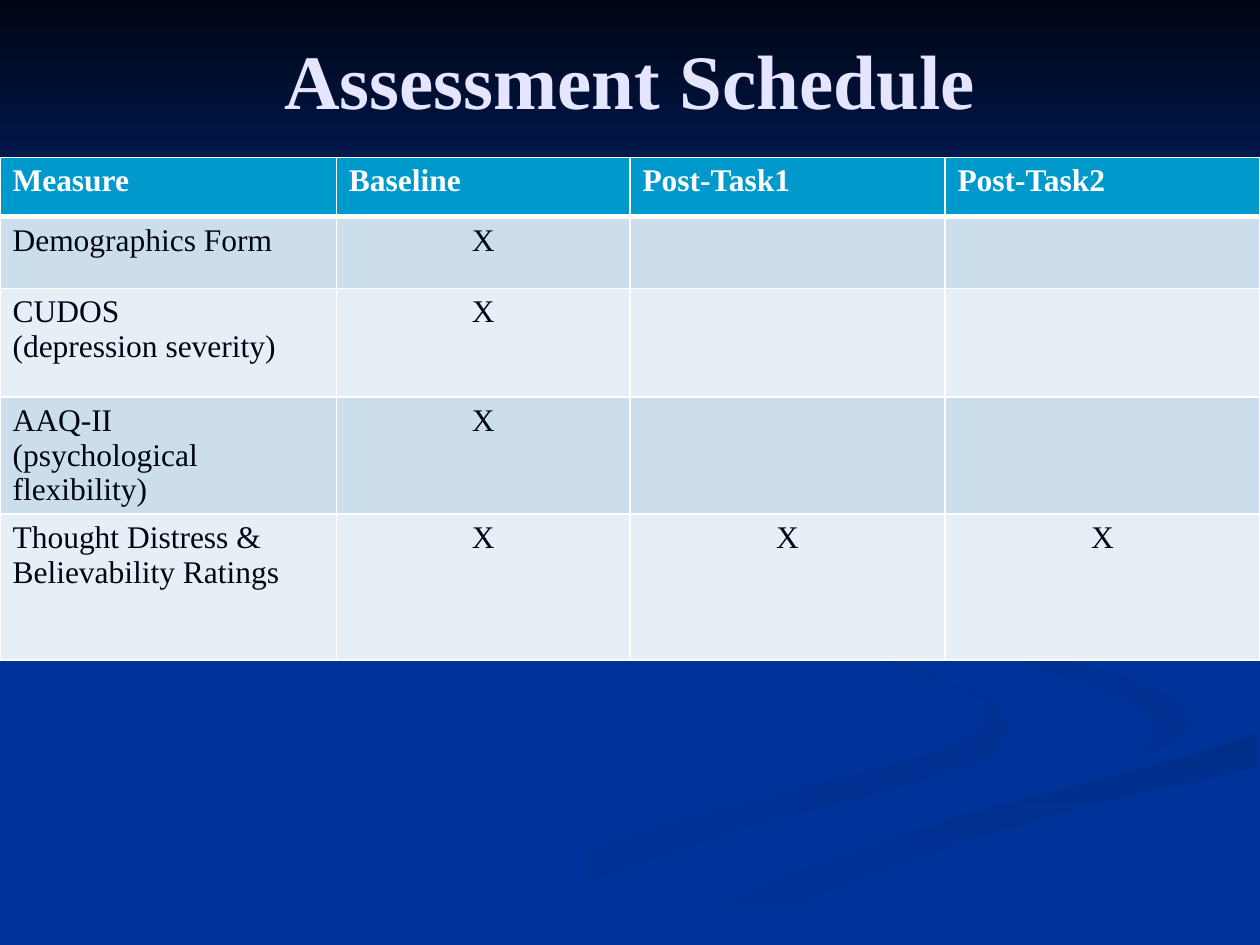
from lxml import etree
from pptx import Presentation
from pptx import util as u
from pptx.dml.color import RGBColor
from pptx.enum import text as t
from pptx.oxml.ns import qn

FONT = "Times New Roman"
BLUE, NIGHT, WHITE = "003399", "000514", "FFFFFF"
HEAD, BANDS = "0099CC", ("CCDEEC", "E7EFF6")
COLS = [2.67, 2.33, 2.5, 2.5]
ROWS = [0.47, 0.57, 0.86, 0.86, 1.16]
TABLE = [
    ["Measure", "Baseline", "Post-Task1", "Post-Task2"],
    ["Demographics Form", "X", "", ""],
    ["CUDOS\n(depression severity)", "X", "", ""],
    ["AAQ-II\n(psychological flexibility)", "X", "", ""],
    ["Thought Distress & Believability Ratings", "X", "X", "X"],
]
WAVES = [
    (BLUE, "003193", 0, [
        (7.81, 5.53), (7.31, 5.33), (6.14, 4.96), (5.75, 4.59), (5.81, 4.84),
        (7.14, 5.3), (7.62, 5.47), (7.81, 5.56), (7.86, 5.66), (7.74, 5.83),
        (7.39, 5.98), (6.84, 6.13), (5.39, 6.49), (4.17, 6.9), (3, 7.49),
        (3.61, 7.49), (4.66, 7), (5.94, 6.56), (7.4, 6.18), (7.86, 6.01),
        (8, 5.81), (7.95, 5.67)]),
    (BLUE, "003193", 45, [
        (9.43, 5.7), (9.3, 5.53), (8.88, 5.35), (7.74, 5.03), (7.24, 4.64),
        (7.46, 5), (8.38, 5.36), (8.92, 5.53), (9.15, 5.71), (9.17, 5.85),
        (8.94, 6.05), (9.32, 5.89), (9.43, 5.76)]),
    ("002F8C", BLUE, 90, [
        (5.03, 7.49), (5.71, 7.49), (6.49, 7.1), (7.52, 6.72), (8.61, 6.4),
        (9.98, 6.09), (9.98, 5.81), (9.5, 5.98), (7.64, 6.47), (6.3, 6.93),
        (5.43, 7.33)]),
    (NIGHT, BLUE, 90, [(0, 0), (0, 3.08), (10, 3.08), (10, 0)]),
]


def rgb(code):
    return RGBColor.from_string(code)


def paint(fill, code):
    fill.solid()
    fill.fore_color.rgb = rgb(code)


def write(frame, words, size=18, color=NIGHT, bold=False, align=t.PP_ALIGN.LEFT):
    frame.text = words
    for para in frame.paragraphs:
        para.alignment = align
        for run in para.runs:
            font = run.font
            font.name, font.size, font.bold = FONT, u.Pt(size), bold
            font.color.rgb = rgb(color)


def wave(slide, first, last, angle, points):
    spots = [(u.Inches(x), u.Inches(y)) for x, y in points]
    pen = slide.shapes.build_freeform(*spots[0])
    pen.add_line_segments(spots[1:], close=True)
    shape = pen.convert_to_shape()
    shape.shadow.inherit = False
    shape.line.fill.background()
    shape.fill.gradient()
    shape.fill.gradient_angle = -angle % 360
    for stop, code, place in zip(shape.fill.gradient_stops, (first, last), (0, 1)):
        stop.color.rgb = rgb(code)
        stop.position = place


def edge(cell, sides):
    props = cell._tc.get_or_add_tcPr()
    for spot, (side, width) in enumerate(sides.items()):
        line = etree.Element(qn("a:ln" + side), w=str(u.Pt(width)))
        solid = etree.SubElement(line, qn("a:solidFill"))
        etree.SubElement(solid, qn("a:srgbClr"), val=WHITE)
        props.insert(spot, line)


def grid(slide):
    frame = slide.shapes.add_table(len(ROWS), len(COLS), 0, u.Inches(1.25),
                                   u.Inches(sum(COLS)), u.Inches(sum(ROWS)))
    table = frame.table
    for col, width in zip(table.columns, COLS):
        col.width = u.Inches(width)
    for r, (row, high) in enumerate(zip(TABLE, ROWS)):
        table.rows[r].height = u.Inches(high)
        for c, words in enumerate(row):
            cell = table.cell(r, c)
            top = r == 0
            paint(cell.fill, HEAD if top else BANDS[(r - 1) % 2])
            mid = c > 0 and not top
            write(cell.text_frame, words, color=WHITE if top else NIGHT, bold=top,
                  align=t.PP_ALIGN.CENTER if mid else t.PP_ALIGN.LEFT)
            edge(cell, {"L": 1, "R": 1, "T": 3 if r == 1 else 1, "B": 3 if top else 1})


def main():
    deck = Presentation()
    deck.slide_width, deck.slide_height = u.Inches(10), u.Inches(7.5)
    slide = deck.slides.add_slide(deck.slide_layouts[5])
    paint(slide.background.fill, BLUE)
    for item in WAVES:
        wave(slide, *item)
    title = slide.shapes.title
    title.left, title.top = u.Inches(0.5), 0
    title.width, title.height = u.Inches(9), u.Inches(1.25)
    title.text_frame.vertical_anchor = t.MSO_ANCHOR.MIDDLE
    write(title.text_frame, "Assessment Schedule", size=44, color="E5E5FF",
          bold=True, align=t.PP_ALIGN.CENTER)
    slide.shapes._spTree.append(title._element)
    grid(slide)
    deck.save("out.pptx")


if __name__ == "__main__":
    main()
